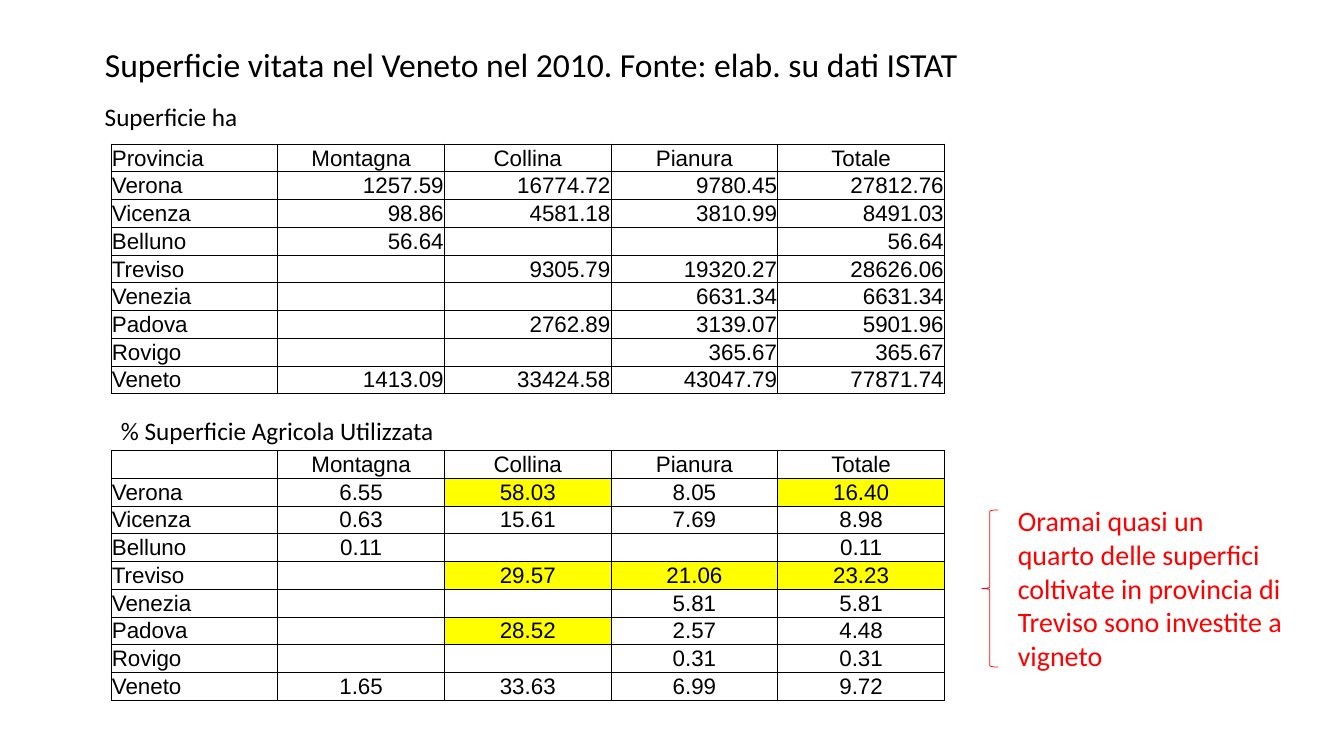
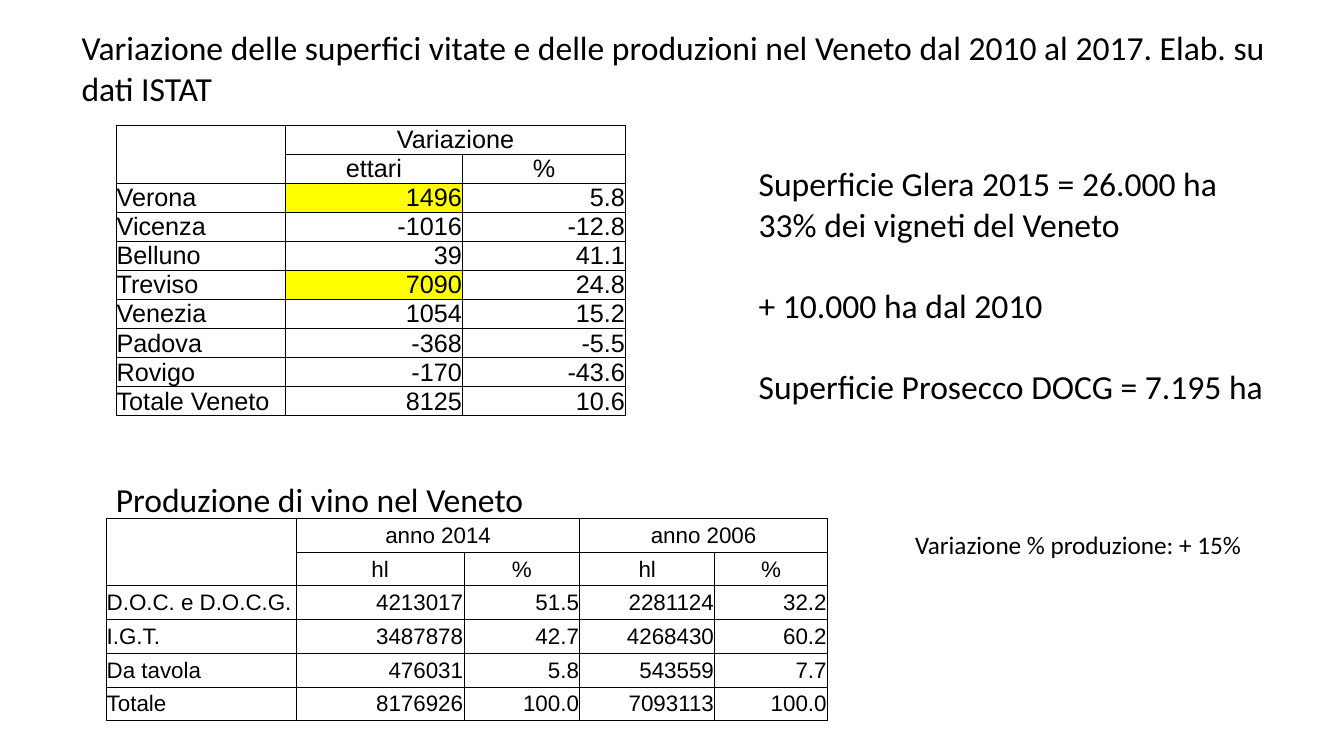
from dataclasses import dataclass, field

import lxml.etree
import pptx
import pptx.dml.color
import pptx.enum.shapes
import pptx.enum.text
import pptx.oxml.ns
import pptx.util

Cm = pptx.util.Cm
Pt = pptx.util.Pt
RGBColor = pptx.dml.color.RGBColor
Align = pptx.enum.text.PP_ALIGN
Anchor = pptx.enum.text.MSO_ANCHOR
qn = pptx.oxml.ns.qn

# Shared style
BLACK = RGBColor(0x00, 0x00, 0x00)
RED = RGBColor(0xFF, 0x00, 0x00)
YELLOW = RGBColor(0xFF, 0xFF, 0x00)
TEXT_FONT = "Calibri"
TABLE_FONT = "Arial"
TITLE_SIZE = 24
RULE_WIDTH = Pt(0.5)
TITLE_ONLY = 5


@dataclass
class Box:
    left: float
    top: float
    width: float
    height: float

    def lengths(self) -> tuple:
        return Cm(self.left), Cm(self.top), Cm(self.width), Cm(self.height)


@dataclass
class Label:
    box: Box
    lines: list[str]
    size: int = 18
    color: RGBColor = BLACK
    gaps: dict[int, float] = field(default_factory=dict)  # line index: points before


@dataclass
class Grid:
    left: float
    top: float
    col_widths: list[float]
    row_height: float
    rows: list[list[str]]
    size: int = 16
    header_rows: int = 1
    body_align: Align = Align.RIGHT
    marked: set[tuple[int, int]] = field(default_factory=set)
    merges: list[tuple[int, int, int, int]] = field(default_factory=list)


def set_font(p, name: str, size: int, color: RGBColor = BLACK) -> None:
    p.font.name = name
    p.font.size = Pt(size)
    p.font.bold = False
    p.font.color.rgb = color


def add_titled_slide(prs, title: str, box: Box):
    s = prs.slides.add_slide(prs.slide_layouts[TITLE_ONLY])
    sp = s.shapes.title
    sp.left, sp.top, sp.width, sp.height = box.lengths()
    tf = sp.text_frame
    tf.text = title
    tf.word_wrap = True
    tf.auto_size = pptx.enum.text.MSO_AUTO_SIZE.NONE
    tf.vertical_anchor = Anchor.TOP
    p = tf.paragraphs[0]
    p.alignment = Align.LEFT
    set_font(p, TEXT_FONT, TITLE_SIZE)
    return s


def add_label(s, label: Label) -> None:
    tf = s.shapes.add_textbox(*label.box.lengths()).text_frame
    tf.word_wrap = True
    for i, line in enumerate(label.lines):
        p = tf.add_paragraph() if i else tf.paragraphs[0]
        p.text = line
        set_font(p, TEXT_FONT, label.size, label.color)
        if i in label.gaps:
            p.space_before = Pt(label.gaps[i])


def add_borders(cell) -> None:
    tc_pr = cell._tc.get_or_add_tcPr()
    for side in ("lnL", "lnR", "lnT", "lnB"):
        ln = lxml.etree.SubElement(tc_pr, qn(f"a:{side}"), w=str(RULE_WIDTH))
        fill = lxml.etree.SubElement(ln, qn("a:solidFill"))
        lxml.etree.SubElement(fill, qn("a:srgbClr"), val=str(BLACK))


def format_cell(cell, text: str, size: int, align: Align, marked: bool) -> None:
    cell.margin_left = cell.margin_right = cell.margin_top = Cm(0.02)
    cell.margin_bottom = 0
    cell.vertical_anchor = Anchor.MIDDLE
    add_borders(cell)
    if marked:
        cell.fill.solid()
        cell.fill.fore_color.rgb = YELLOW
    else:
        cell.fill.background()
    p = cell.text_frame.paragraphs[0]
    p.text = text
    p.alignment = align
    set_font(p, TABLE_FONT, size)
    if not text:  # keeps an empty cell from stretching its row
        lxml.etree.SubElement(p._p, qn("a:endParaRPr"), sz=str(size * 100))


def add_grid(s, grid: Grid) -> None:
    box = Box(grid.left, grid.top, sum(grid.col_widths),
              grid.row_height * len(grid.rows))
    table = s.shapes.add_table(
        len(grid.rows), len(grid.col_widths), *box.lengths()).table
    table.first_row = table.horz_banding = False
    for column, width in zip(table.columns, grid.col_widths):
        column.width = Cm(width)
    for r, row in enumerate(grid.rows):
        table.rows[r].height = Cm(grid.row_height)
        for c, text in enumerate(row):
            if c == 0:
                align = Align.LEFT
            else:
                align = Align.CENTER if r < grid.header_rows else grid.body_align
            format_cell(table.cell(r, c), text, grid.size, align, (r, c) in grid.marked)
    for top, left, bottom, right in grid.merges:
        table.cell(top, left).merge(table.cell(bottom, right))


def add_brace(s, box: Box) -> None:
    sp = s.shapes.add_shape(
        pptx.enum.shapes.MSO_SHAPE.LEFT_BRACE, *box.lengths())
    sp.shadow.inherit = False
    sp.fill.background()
    sp.line.color.rgb = RED
    sp.line.width = RULE_WIDTH


# Slide 1: vineyard area by province
ZONES = ["Montagna", "Collina", "Pianura", "Totale"]
ZONE_WIDTHS = [4.2] * 5

AREA_HA = Grid(2.8, 3.63, ZONE_WIDTHS, 0.7, [
    ["Provincia", *ZONES],
    ["Verona", "1257.59", "16774.72", "9780.45", "27812.76"],
    ["Vicenza", "98.86", "4581.18", "3810.99", "8491.03"],
    ["Belluno", "56.64", "", "", "56.64"],
    ["Treviso", "", "9305.79", "19320.27", "28626.06"],
    ["Venezia", "", "", "6631.34", "6631.34"],
    ["Padova", "", "2762.89", "3139.07", "5901.96"],
    ["Rovigo", "", "", "365.67", "365.67"],
    ["Veneto", "1413.09", "33424.58", "43047.79", "77871.74"],
])

AREA_PERCENT = Grid(2.8, 11.35, ZONE_WIDTHS, 0.7, [
    ["", *ZONES],
    ["Verona", "6.55", "58.03", "8.05", "16.40"],
    ["Vicenza", "0.63", "15.61", "7.69", "8.98"],
    ["Belluno", "0.11", "", "", "0.11"],
    ["Treviso", "", "29.57", "21.06", "23.23"],
    ["Venezia", "", "", "5.81", "5.81"],
    ["Padova", "", "28.52", "2.57", "4.48"],
    ["Rovigo", "", "", "0.31", "0.31"],
    ["Veneto", "1.65", "33.63", "6.99", "9.72"],
], body_align=Align.CENTER, marked={(1, 2), (1, 4), (4, 2), (4, 3), (4, 4), (6, 2)})

AREA_LABELS = [
    Label(Box(2.39, 2.44, 15.3, 1.02), ["Superficie ha"]),
    Label(Box(2.8, 10.34, 9.14, 1.02), ["% Superficie Agricola Utilizzata"]),
    Label(Box(25.4, 12.57, 7.24, 4.52),
          ["Oramai quasi un quarto delle superfici coltivate in provincia di "
           "Treviso sono investite a vigneto"], size=20, color=RED),
]

# Slide 2: change in area and wine production
AREA_CHANGE = Grid(2.92, 3.15, [4.27, 4.47, 4.11], 0.72, [
    ["", "Variazione", ""],
    ["", "ettari", "%"],
    ["Verona", "1496", "5.8"],
    ["Vicenza", "-1016", "-12.8"],
    ["Belluno", "39", "41.1"],
    ["Treviso", "7090", "24.8"],
    ["Venezia", "1054", "15.2"],
    ["Padova", "-368", "-5.5"],
    ["Rovigo", "-170", "-43.6"],
    ["Totale Veneto", "8125", "10.6"],
], size=18, header_rows=2, marked={(2, 1), (5, 1)},
    merges=[(0, 0, 1, 0), (0, 1, 0, 2)])

WINE_OUTPUT = Grid(2.67, 13.06, [4.8, 4.22, 2.92, 3.4, 2.84], 0.85, [
    ["", "anno 2014", "", "anno 2006", ""],
    ["", "hl", "%", "hl", "%"],
    ["D.O.C. e D.O.C.G.", "4213017", "51.5", "2281124", "32.2"],
    ["I.G.T.", "3487878", "42.7", "4268430", "60.2"],
    ["Da tavola", "476031", "5.8", "543559", "7.7"],
    ["Totale", "8176926", "100.0", "7093113", "100.0"],
], header_rows=2, merges=[(0, 0, 1, 0), (0, 1, 0, 2), (0, 3, 0, 4)])

CHANGE_LABELS = [
    Label(Box(18.87, 3.99, 13.64, 6.4),
          ["Superficie Glera 2015 = 26.000 ha",
           "33% dei vigneti del Veneto",
           "+ 10.000 ha dal 2010",
           "Superficie Prosecco DOCG = 7.195 ha"],
          size=24, gaps={2: 29.3, 3: 29.3}),
    Label(Box(2.67, 11.94, 18.16, 1.27), ["Produzione di vino nel Veneto"], size=24),
    Label(Box(22.81, 13.21, 9.68, 1.02), ["Variazione % produzione: + 15%"]),
]


def main() -> None:
    prs = pptx.Presentation()
    prs.slide_width, prs.slide_height = Cm(33.87), Cm(19.05)

    area = add_titled_slide(
        prs, "Superficie vitata nel Veneto nel 2010. Fonte: elab. su dati ISTAT",
        Box(2.39, 0.97, 28.17, 1.27))
    change = add_titled_slide(
        prs, "Variazione delle superfici vitate e delle produzioni nel Veneto "
        "dal 2010 al 2017. Elab. su dati ISTAT", Box(1.8, 0.56, 30.71, 2.31))

    for s, grids, labels in (
        (area, [AREA_HA, AREA_PERCENT], AREA_LABELS),
        (change, [AREA_CHANGE, WINE_OUTPUT], CHANGE_LABELS),
    ):
        for grid in grids:
            add_grid(s, grid)
        for label in labels:
            add_label(s, label)
    add_brace(area, Box(24.74, 12.85, 0.41, 3.96))

    prs.save("out.pptx")


if __name__ == "__main__":
    main()
